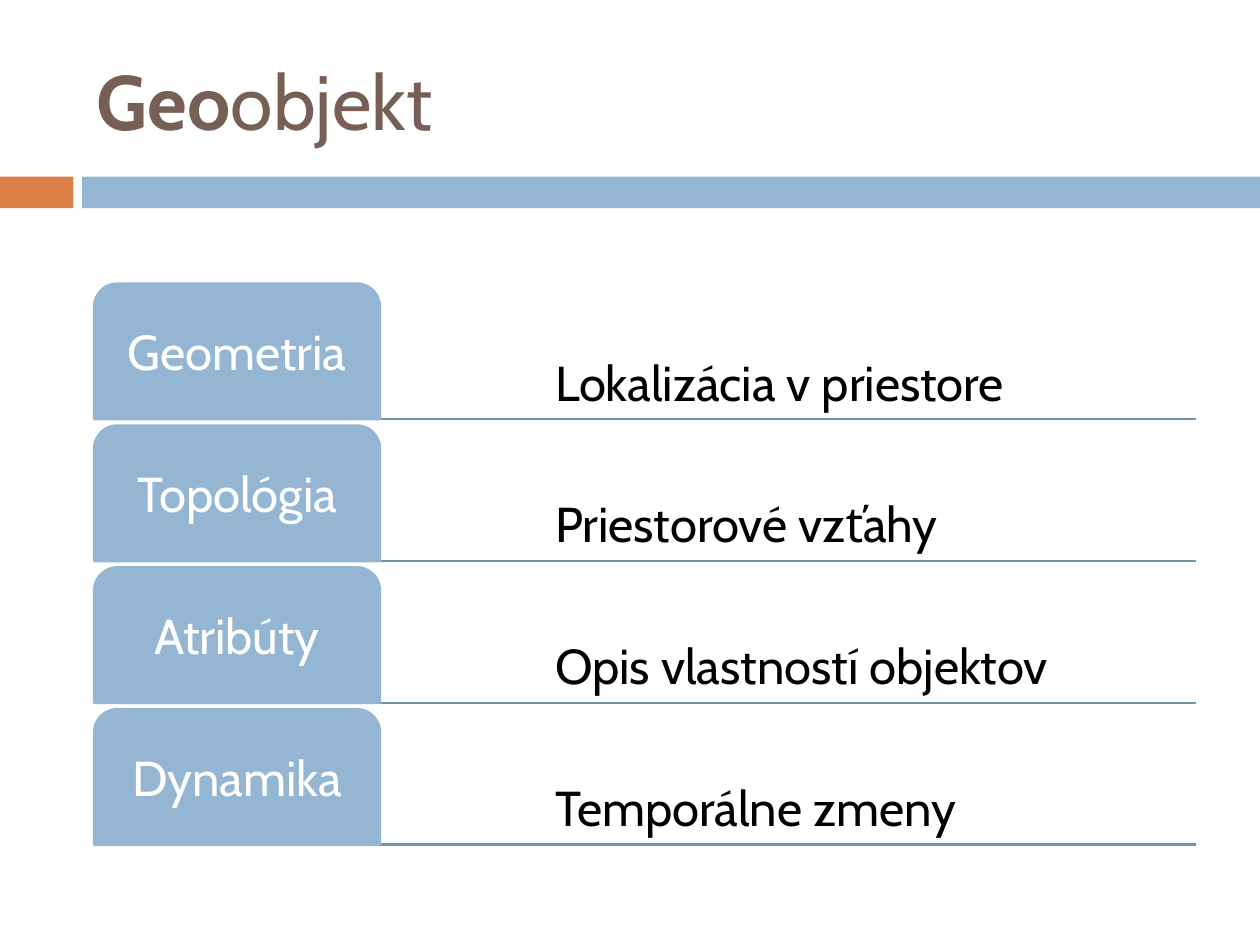
from lxml import etree
from pptx import Presentation
from pptx.dml.color import RGBColor
from pptx.enum.shapes import MSO_CONNECTOR, MSO_SHAPE
from pptx.enum.text import MSO_ANCHOR, PP_ALIGN
from pptx.oxml.ns import qn
from pptx.util import Cm, Pt

RECTANGLE = MSO_SHAPE.RECTANGLE
ROUND_TOP = MSO_SHAPE.ROUND_2_SAME_RECTANGLE
STRAIGHT = MSO_CONNECTOR.STRAIGHT
MIDDLE, BOTTOM = MSO_ANCHOR.MIDDLE, MSO_ANCHOR.BOTTOM
LEFT, CENTER = PP_ALIGN.LEFT, PP_ALIGN.CENTER

COLORS = {
    "brown": "775F55",
    "orange": "DD8047",
    "blue": "94B6D2",
    "rule": "7792A8",
    "white": "FFFFFF",
    "black": "000000",
}
ROWS = [
    ("Geometria", "Lokalizácia v priestore"),
    ("Topológia", "Priestorové vzťahy"),
    ("Atribúty", "Opis vlastností objektov"),
    ("Dynamika", "Temporálne zmeny"),
]
ROW_TOP, ROW_PITCH, ROW_HEIGHT = 5.72, 2.86, 2.73
TAB_LEFT, TAB_WIDTH = 1.9, 5.76
ROW_RIGHT = 24.1
INSET, TEXT_INDENT = 0.15, 3.53


def add_text(para, text, size=28, color="black", bold=False, align=LEFT, spacing=0.9):
    para.alignment = align
    para.line_spacing = spacing
    span = para.add_run()
    span.text = text
    span.font.name = "Cabin"
    span.font.size = Pt(size)
    span.font.bold = bold
    span.font.color.rgb = RGBColor.from_string(COLORS[color])


def set_frame(frame, anchor, left=INSET):
    frame.word_wrap = True
    frame.vertical_anchor = anchor
    frame.margin_left = Cm(left)
    frame.margin_top = frame.margin_right = frame.margin_bottom = Cm(INSET)


deck = Presentation()
deck.slide_width, deck.slide_height = Cm(25.4), Cm(19.05)
page = deck.slides.add_slide(deck.slide_layouts[5])

for left, width, color in [(0, 1.48, "orange"), (1.65, 23.75, "blue")]:
    bar = page.shapes.add_shape(RECTANGLE, Cm(left), Cm(3.56), Cm(width), Cm(0.64))
    bar.shadow.inherit = False
    bar.fill.solid()
    bar.fill.fore_color.rgb = RGBColor.from_string(COLORS[color])
    bar.line.fill.background()

title = page.shapes.title
title.left, title.top, title.width, title.height = Cm(1.7), Cm(0.64), Cm(22.66), Cm(2.74)
title.text_frame.vertical_anchor = MIDDLE
for text, bold in [("Geo", True), ("objekt", False)]:
    add_text(title.text_frame.paragraphs[0], text, size=44, color="brown", bold=bold, spacing=1.0)

for index, (label, description) in enumerate(ROWS):
    top = ROW_TOP + index * ROW_PITCH
    bottom = top + ROW_HEIGHT
    tab_right = TAB_LEFT + TAB_WIDTH

    rule = page.shapes.add_connector(STRAIGHT, Cm(TAB_LEFT), Cm(bottom), Cm(ROW_RIGHT), Cm(bottom))
    rule.line.color.rgb = RGBColor.from_string(COLORS["rule"])
    rule.line.width = Pt(1.5)
    etree.SubElement(rule.element.spPr, qn("a:effectLst"))

    box = page.shapes.add_textbox(Cm(tab_right), Cm(top), Cm(ROW_RIGHT - tab_right), Cm(ROW_HEIGHT))
    set_frame(box.text_frame, BOTTOM, left=TEXT_INDENT)
    add_text(box.text_frame.paragraphs[0], description)

    tab = page.shapes.add_shape(ROUND_TOP, Cm(TAB_LEFT), Cm(top), Cm(TAB_WIDTH), Cm(ROW_HEIGHT))
    tab.shadow.inherit = False
    tab.adjustments[0] = 0.17
    tab.fill.solid()
    tab.fill.fore_color.rgb = RGBColor.from_string(COLORS["blue"])
    tab.line.color.rgb = RGBColor.from_string(COLORS["blue"])
    tab.line.width = Pt(1.5)
    set_frame(tab.text_frame, MIDDLE)
    add_text(tab.text_frame.paragraphs[0], label, color="white", align=CENTER)

deck.save("out.pptx")
